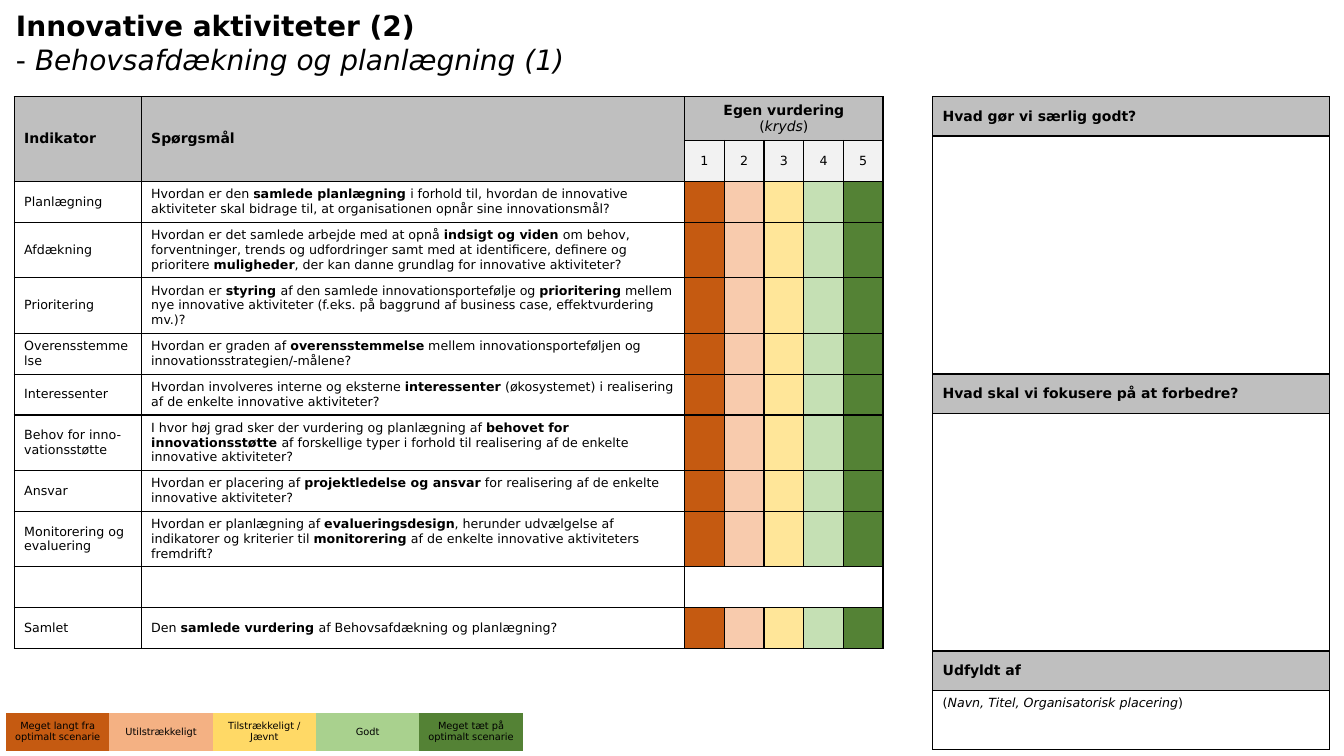
from lxml import etree
from pptx import Presentation
from pptx.dml.color import RGBColor
from pptx.enum.text import MSO_ANCHOR, MSO_AUTO_SIZE, PP_ALIGN
from pptx.oxml.ns import qn
from pptx.util import Inches, Pt

LEFT, CENTER = PP_ALIGN.LEFT, PP_ALIGN.CENTER
TOP, MIDDLE = MSO_ANCHOR.TOP, MSO_ANCHOR.MIDDLE
FIT_SHAPE = MSO_AUTO_SIZE.SHAPE_TO_FIT_TEXT
FONT = "DejaVu Sans"
COLORS = {"text": "000000", "border": "000000", "header": "BFBFBF", "score": "F2F2F2"}
SCALE_COLORS = ["C55A11", "F8CBAD", "FFE699", "C5E0B4", "548235"]

# Asterisks enclose bold text, underscores enclose italic text.
TITLE = ["*Innovative aktiviteter (2)*", "- _Behovsafdækning og planlægning (1)_"]
HEADINGS = ["*Indikator*", "*Spørgsmål*", "*Egen vurdering*\n(_kryds_)"]
QUESTIONS = [
    ("Planlægning", "Hvordan er den *samlede planlægning *i forhold til, hvordan de innovative "
     "aktiviteter skal bidrage til, at organisationen opnår sine innovationsmål?"),
    ("Afdækning", "Hvordan er det samlede arbejde med at opnå *indsigt og viden *om behov, "
     "forventninger, trends og udfordringer samt med at identificere, definere og prioritere "
     "*muligheder*, der kan danne grundlag for innovative aktiviteter?"),
    ("Prioritering", "Hvordan er* styring *af den samlede innovationsportefølje og *prioritering* "
     "mellem nye innovative aktiviteter (f.eks. på baggrund af business case, effektvurdering mv.)?"),
    ("Overensstemmelse", "Hvordan er graden af *overensstemmelse* mellem innovationsporteføljen "
     "og innovationsstrategien/-målene?"),
    ("Interessenter", "Hvordan involveres interne og eksterne *interessenter *(økosystemet) i "
     "realisering af de enkelte innovative aktiviteter?"),
    ("Behov for inno-vationsstøtte", "I hvor høj grad sker der vurdering og planlægning af "
     "*behovet for innovationsstøtte *af forskellige typer i forhold til realisering af de "
     "enkelte innovative aktiviteter?"),
    ("Ansvar", "Hvordan er placering af *projektledelse og ansvar *for realisering af de enkelte "
     "innovative aktiviteter?"),
    ("Monitorering og evaluering", "Hvordan er planlægning af *evalueringsdesign*, herunder "
     "udvælgelse af indikatorer og kriterier til *monitorering *af de enkelte innovative "
     "aktiviteters fremdrift?"),
    ("", ""),
    ("Samlet", "Den *samlede vurdering *af Behovsafdækning og planlægning?"),
]
REFLECTIONS = [
    ("*Hvad gør vi særlig godt?*", "", 2.36),
    ("*Hvad skal vi fokusere på at forbedre?*", "", 2.36),
    ("*Udfyldt af*", "(_Navn, Titel, Organisatorisk placering_)", 0.59),
]
LEGEND = [
    ("Meget langt fra optimalt scenarie", "C55A11"),
    ("Utilstrækkeligt", "F4B183"),
    ("Tilstrækkeligt / Jævnt", "FFD966"),
    ("Godt", "A9D18E"),
    ("Meget tæt på optimalt scenarie", "548235"),
]


def write(paragraph, text, size, align=LEFT):
    paragraph.alignment = align
    paragraph.font.name = FONT
    paragraph.font.size = Pt(size)
    paragraph.font.color.rgb = RGBColor.from_string(COLORS["text"])
    for line_number, line in enumerate(text.split("\n")):
        if line_number:
            paragraph.add_line_break()
        for b, chunk in enumerate(line.split("*")):
            for i, piece in enumerate(chunk.split("_")):
                if piece:
                    run = paragraph.add_run()
                    run.text = piece
                    run.font.bold = b % 2 == 1
                    run.font.italic = i % 2 == 1


def set_borders(cell, sides):
    properties = cell._tc.get_or_add_tcPr()
    for side in "LRTB":
        line = etree.SubElement(properties, qn(f"a:ln{side}"), w=str(Pt(1)))
        if side in sides:
            fill = etree.SubElement(line, qn("a:solidFill"))
            etree.SubElement(fill, qn("a:srgbClr"), val=COLORS["border"])
        else:
            etree.SubElement(line, qn("a:noFill"))


def fill_cell(cell, text="", size=9, color=None, align=LEFT, anchor=MIDDLE, sides="LRTB"):
    set_borders(cell, sides)
    if color:
        cell.fill.solid()
        cell.fill.fore_color.rgb = RGBColor.from_string(color)
    else:
        cell.fill.background()
    cell.vertical_anchor = anchor
    write(cell.text_frame.paragraphs[0], text, size, align)


def add_grid(slide, left, top, widths, heights):
    table = slide.shapes.add_table(
        len(heights), len(widths), Inches(left), Inches(top),
        Inches(sum(widths)), Inches(sum(heights))).table
    table.first_row = table.horz_banding = False
    for column, width in zip(table.columns, widths):
        column.width = Inches(width)
    for row, height in zip(table.rows, heights):
        row.height = Inches(height)
    return table


def add_title(slide):
    box = slide.shapes.add_textbox(Inches(0.06), Inches(0.04), Inches(9.92), Inches(0.77))
    frame = box.text_frame
    frame.word_wrap = True
    frame.auto_size = FIT_SHAPE
    for number, line in enumerate(TITLE):
        write(frame.add_paragraph() if number else frame.paragraphs[0], line, 20)


def add_reflections(slide):
    heights = [h for _, _, answer_height in REFLECTIONS for h in (0.39, answer_height)]
    table = add_grid(slide, 9.25, 0.96, [3.94], heights)
    for number, (heading, answer, _) in enumerate(REFLECTIONS):
        fill_cell(table.cell(2 * number, 0), heading, 10, COLORS["header"])
        fill_cell(table.cell(2 * number + 1, 0), answer, anchor=TOP)


def add_legend(slide):
    table = add_grid(slide, 0.06, 7.07, [1.025] * len(LEGEND), [0.38])
    for column, (label, color) in enumerate(LEGEND):
        cell = table.cell(0, column)
        fill_cell(cell, label, 7, color, CENTER, sides="")
        cell.margin_left = cell.margin_right = Inches(0.07)
        cell.margin_top = cell.margin_bottom = 0


def add_assessment(slide):
    levels = len(SCALE_COLORS)
    table = add_grid(slide, 0.14, 0.96, [1.26, 5.39] + [0.394] * levels,
                     [0.39] + [0.405] * (len(QUESTIONS) + 1))
    for column in range(levels + 2):
        heading = HEADINGS[column] if column < len(HEADINGS) else ""
        fill_cell(table.cell(0, column), heading, 10, COLORS["header"],
                  LEFT if column < 2 else CENTER)
        score = str(column - 1) if column >= 2 else ""
        fill_cell(table.cell(1, column), score, 9,
                  COLORS["score"] if score else COLORS["header"], CENTER)
    for column in range(2):
        table.cell(0, column).merge(table.cell(1, column))
    table.cell(0, 2).merge(table.cell(0, levels + 1))

    for row, (indicator, question) in enumerate(QUESTIONS, 2):
        fill_cell(table.cell(row, 0), indicator)
        fill_cell(table.cell(row, 1), question)
        for level, color in enumerate(SCALE_COLORS):
            outer = "L" * (level == 0) + "R" * (level == levels - 1)
            fill_cell(table.cell(row, level + 2), color=color if question else None,
                      sides="LRTB" if question else "TB" + outer)


def main():
    presentation = Presentation()
    presentation.slide_width = Inches(13.33)
    presentation.slide_height = Inches(7.5)
    slide = presentation.slides.add_slide(presentation.slide_layouts[6])
    add_title(slide)
    add_reflections(slide)
    add_legend(slide)
    add_assessment(slide)
    presentation.save("out.pptx")


if __name__ == "__main__":
    main()
